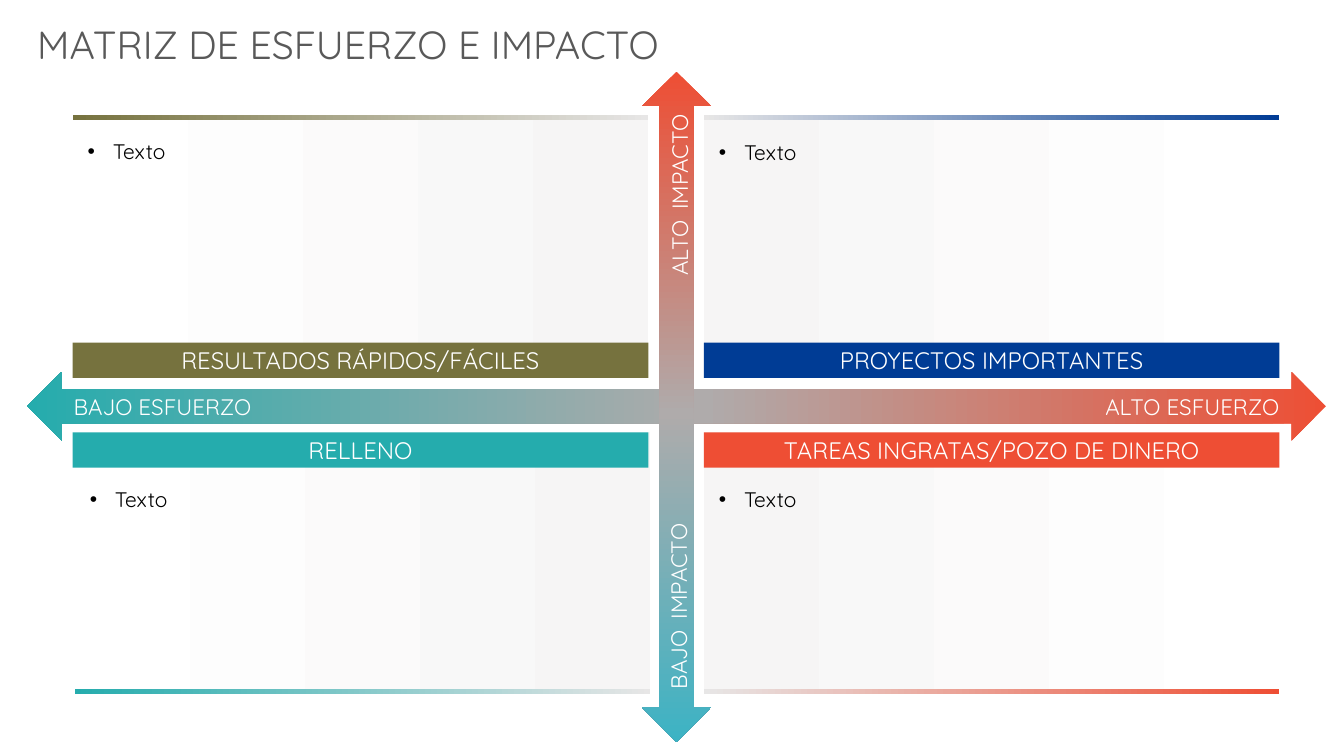
from pptx import Presentation
from pptx.dml.color import RGBColor
from pptx.enum import shapes, text
from pptx.oxml import ns
from pptx.util import Inches, Pt
from lxml import etree

# Content
TITLE = "MATRIZ DE ESFUERZO E IMPACTO"
# heading, item, colour, body left, body top, upper half, left half
QUADS = [
    ("PROYECTOS IMPORTANTES", "Texto", "blue", 6.98, 1.15, True, False),
    ("RELLENO", "Texto", "teal", 0.74, 4.29, False, True),
    ("TAREAS INGRATAS/POZO DE DINERO", "Texto", "red", 6.98, 4.29, False, False),
    ("RESULTADOS RÁPIDOS/FÁCILES", "Texto", "olive", 0.72, 1.14, True, True),
]
# box, rotation, colours by position
ARROWS = [
    ((6.37, -2.41, 0.68, 12.88), 90, [(0, "ember"), (48, "mid"), (100, "teal")]),
    ((6.37, 0.71, 0.68, 6.65), 0, [(0, "red"), (51, "mid"), (100, "aqua")]),
]
# words, box, rotation, alignment
LABELS = [
    (["BAJO ESFUERZO"], (0.73, 3.88, 1.91, 0.3), 0, "LEFT"),
    (["ALTO ESFUERZO"], (10.79, 3.88, 1.9, 0.3), 0, "RIGHT"),
    (["BAJO", "IMPACTO"], (5.58, 5.55, 2.16, 0.41), 270, "LEFT"),
    (["ALTO", "IMPACTO"], (5.77, 1.73, 1.8, 0.41), 270, "CENTER"),
]
THEME = {
    "font": "Quicksand",
    "title": 28, "head": 17, "label": 16, "item": 15, "gap": 28,
    "gray": "595959", "black": "000000", "white": "FFFFFF", "pale": "F6F5F5",
    "fade": "E7E6E6", "mid": "AFABAB", "olive": "76723E", "blue": "003C95",
    "teal": "25ACAD", "red": "EE4E34", "ember": "ED4F35", "aqua": "3CB3C4",
}
WIDE, TALL, HEAD, RULE = 5.71, 2.6, 0.35, 0.05
LEFT, RIGHT, TOP, BASE = 0.72, 6.98, 1.14, 6.84
FLAT = (0, 0, 0, 0)

deck = Presentation()
deck.slide_width, deck.slide_height = Inches(13.33), Inches(7.5)
slide = deck.slides.add_slide(deck.slide_layouts[6])


def color(name):
    return RGBColor.from_string(THEME[name])


def shade(shape, stops, angle=0):
    shape.fill.gradient()
    shape.fill.gradient_angle = -angle % 360
    group = shape._element.spPr.find(".//" + ns.qn("a:gsLst"))
    for stop in list(group):
        group.remove(stop)
    for place, name in stops:
        stop = etree.SubElement(group, ns.qn("a:gs"), pos=str(place * 1000))
        etree.SubElement(stop, ns.qn("a:srgbClr"), val=THEME[name])


def draw(box, fill, kind="RECTANGLE", angle=0):
    shape = slide.shapes.add_shape(
        getattr(shapes.MSO_SHAPE, kind), *map(Inches, box))
    shape.shadow.inherit = False
    shape.line.fill.background()
    if isinstance(fill, str):
        shape.fill.solid()
        shape.fill.fore_color.rgb = color(fill)
    else:
        shade(shape, fill, angle)
    return shape


def write(shape, runs, tint, align="LEFT", anchor="MIDDLE", pads=FLAT, wrap=True):
    frame = shape.text_frame
    sides = ("margin_left", "margin_top", "margin_right", "margin_bottom")
    form = dict(zip(sides, map(Inches, pads)))
    form.update(word_wrap=wrap, vertical_anchor=getattr(text.MSO_ANCHOR, anchor))
    for key, value in form.items():
        setattr(frame, key, value)
    para = frame.paragraphs[0]
    para.alignment = getattr(text.PP_ALIGN, align)
    for words, size in runs:
        run = para.add_run()
        run.text = words
        run.font.color.rgb = color(tint)
        for key, value in {"name": THEME["font"], "size": Pt(THEME[size])}.items():
            setattr(run.font, key, value)
    return para


def bullet(para):
    para.line_spacing, para.space_after = 1.15, Pt(8)
    props = para._p.get_or_add_pPr()
    for key, value in {"marL": 0.25, "indent": -0.25}.items():
        props.set(key, str(Inches(value)))
    etree.SubElement(props, ns.qn("a:buFont"), typeface="Arial")
    etree.SubElement(props, ns.qn("a:buChar"), char="•")


# Title
title = slide.shapes.add_textbox(*map(Inches, (0.27, 0.15, 6.98, 0.57)))
write(title, [(TITLE, "title")], "gray", anchor="TOP", pads=(0.1, 0.05, 0.1, 0.05))

# Quadrant panels
for _, item, _, x, y, upper, left in QUADS:
    ends = ("white", "pale") if left else ("pale", "white")
    panel = draw((x, y, WIDE, TALL), list(zip((0, 100), ends)))
    pads = (0.15, 0.2, 0.1, 0.3) if upper else (0.15, 0.5, 0.1, 0.05)
    bullet(write(panel, [(item, "item")], "black", anchor="TOP", pads=pads))

# Headings and outer rules
for head, _, hue, x, y, upper, left in QUADS:
    level = 3.4 if upper else 4.29
    band = draw((LEFT if left else RIGHT, level, WIDE, HEAD), hue)
    write(band, [(head, "head")], "white", "CENTER")
    ends = (hue, "fade") if left else ("fade", hue)
    draw((x, TOP if upper else BASE, WIDE, RULE), list(zip((0, 100), ends)))

# Axis arrows
for box, turn, stops in ARROWS:
    arrow = draw(box, stops, "UP_DOWN_ARROW", 90)
    arrow.rotation = turn
    arrow.adjustments[0], arrow.adjustments[1] = 0.463, 0.5

# Axis labels
for words, box, turn, align in LABELS:
    label = slide.shapes.add_textbox(*map(Inches, box))
    label.rotation = turn
    runs = [(words[0], "label")]
    for word in words[1:]:
        runs += [(" ", "gap"), (word, "label")]
    write(label, runs, "white", align, wrap=not turn)

deck.save("out.pptx")
